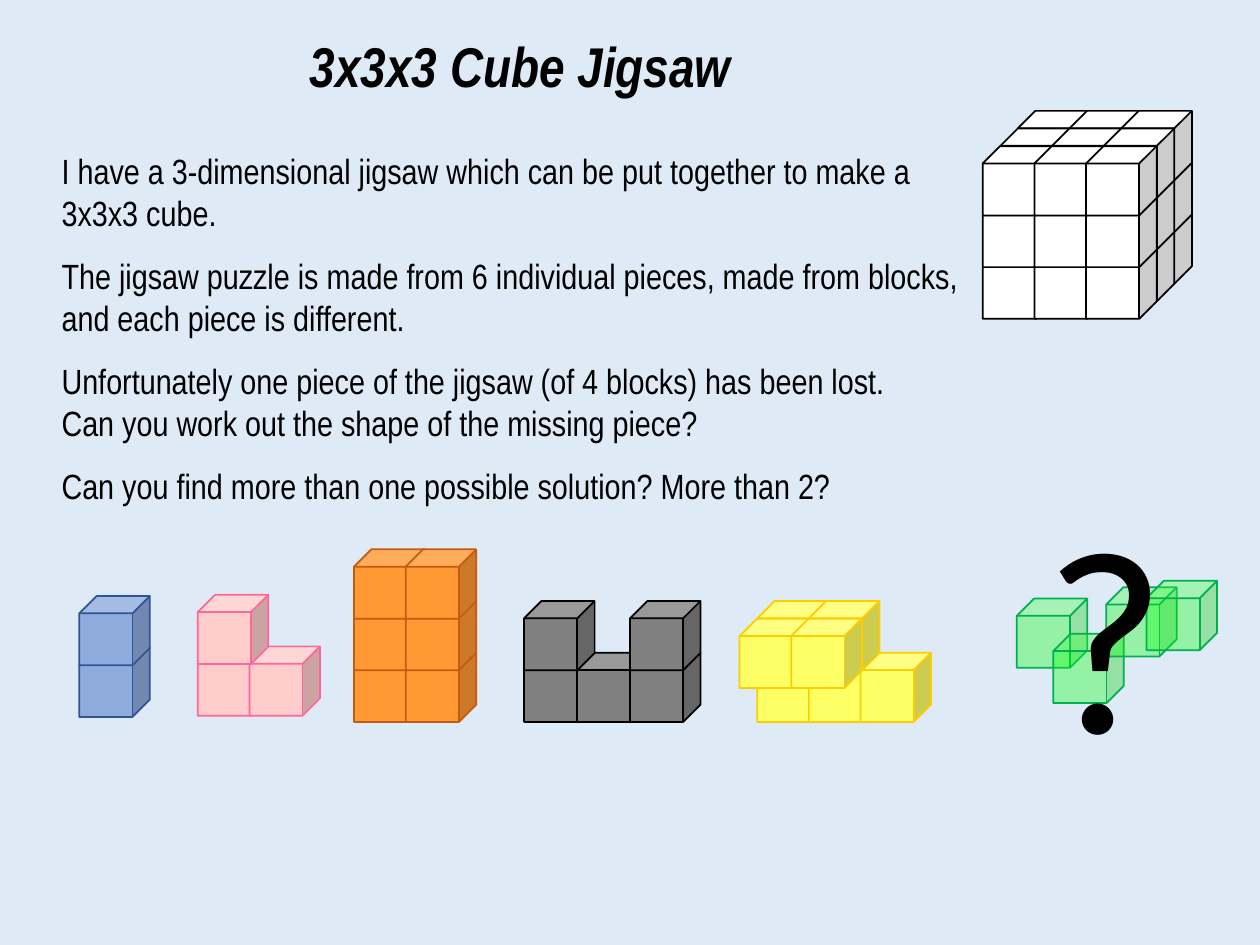
from itertools import product

from lxml import etree
from pptx import Presentation
from pptx.dml.color import RGBColor
from pptx.enum.shapes import MSO_SHAPE
from pptx.enum.text import MSO_AUTO_SIZE, PP_ALIGN
from pptx.oxml.ns import qn
from pptx.util import Inches, Pt

CUBE = MSO_SHAPE.CUBE
FIT_SHAPE = MSO_AUTO_SIZE.SHAPE_TO_FIT_TEXT
CENTER = PP_ALIGN.CENTER
LEFT = PP_ALIGN.LEFT

COLORS = {
    "background": "DEEBF7", "text": "000000",
    "blue": "8FAADC", "blue edge": "2F5597",
    "orange": "FF9933", "orange edge": "C55A11",
    "pink": "FFCCCC", "pink edge": "FF6699",
    "grey": "808080", "grey edge": "000000",
    "yellow": "FFFF66", "yellow edge": "FFCC00",
    "white": "FFFFFF", "white edge": "000000",
    "green": "00FF00", "green edge": "00B050",
}

TITLE = "3x3x3 Cube Jigsaw"
PUZZLE = [
    "I have a 3-dimensional jigsaw which can be put together to make a 3x3x3 cube.",
    "The jigsaw puzzle is made from 6 individual pieces, made from blocks, "
    "and each piece is different.",
    "Unfortunately one piece of the jigsaw (of 4 blocks) has been lost.\n"
    "Can you work out the shape of the missing piece?",
    "Can you find more than one possible solution? More than 2?",
]


def grid(columns, rows, layers=1):
    return [(column, row, layer) for layer, row, column
            in product(range(layers), range(rows), range(columns))]


PIECES = [
    ("blue", 0.63, 5.14, 0.41, grid(1, 2)),
    ("orange", 2.81, 5.18, 0.41, grid(2, 3)),
    ("pink", 1.57, 5.13, 0.41, grid(2, 1) + [(0, 1, 0)]),
    ("grey", 4.16, 5.18, 0.42, grid(3, 1) + [(0, 1, 0), (2, 1, 0)]),
    ("yellow", 6.01, 5.18, 0.41,
     grid(3, 1) + [(0, 1, 0), (1, 1, 0), (0, 1, 1), (1, 1, 1)]),
    ("white", 8.08, 1.7, 0.41, grid(3, 3, 3)),
]
MISSING_BLOCKS = [(8.07, 4.75), (8.36, 5.03), (8.78, 4.66), (9.1, 4.61)]


class PuzzleSlide:
    block_width = 0.56
    block_height = 0.55
    rise = 0.41
    depth = 0.14

    def __init__(self, slide):
        self.slide = slide
        fill = slide.background.fill
        fill.solid()
        fill.fore_color.rgb = self.color("background")

    def color(self, name):
        return RGBColor.from_string(COLORS[name])

    def text_box(self, left, top, width, height, wrap=True):
        box = self.slide.shapes.add_textbox(
            Inches(left), Inches(top), Inches(width), Inches(height))
        frame = box.text_frame
        frame.word_wrap = wrap
        frame.auto_size = FIT_SHAPE
        return frame

    def set_text(self, paragraph, text, size, font, strong=False, align=LEFT, before=0):
        paragraph.text = text
        paragraph.alignment = align
        paragraph.space_before = Pt(before)
        for run in paragraph.runs:
            run.font.name = font
            run.font.size = Pt(size)
            run.font.bold = run.font.italic = strong
            run.font.color.rgb = self.color("text")

    def blocks(self, name, positions, opacity=100):
        group = self.slide.shapes.add_group_shape()
        for left, top in positions:
            block = group.shapes.add_shape(
                CUBE, Inches(left), Inches(top),
                Inches(self.block_width), Inches(self.block_height))
            block.shadow.inherit = False
            block.fill.solid()
            block.fill.fore_color.rgb = self.color(name)
            block.line.color.rgb = self.color(f"{name} edge")
            block.line.width = Pt(1)
            if opacity < 100:
                tint = block.element.spPr.find(qn("a:solidFill"))[0]
                etree.SubElement(tint, qn("a:alpha"), val=str(opacity * 1000))

    def piece(self, name, left, top, pitch, cells):
        self.blocks(name, [
            (left + column * pitch - layer * self.depth,
             top - row * self.rise + layer * self.depth)
            for column, row, layer in cells])


def main():
    presentation = Presentation()
    presentation.slide_width = Inches(10)
    presentation.slide_height = Inches(7.5)
    page = PuzzleSlide(presentation.slides.add_slide(presentation.slide_layouts[6]))

    story = page.text_box(0.39, -0.1, 7.48, 4.21)
    story.margin_top = Inches(0.35)
    page.set_text(story.paragraphs[0], TITLE, 32, "Arial Narrow", strong=True, align=CENTER)
    for index, sentence in enumerate(PUZZLE):
        page.set_text(story.add_paragraph(), sentence, 20, "Arial Narrow",
                      before=12 if index else 29)

    for piece in PIECES:
        page.piece(*piece)
    page.blocks("green", MISSING_BLOCKS, opacity=33)

    question = page.text_box(8.19, 3.69, 1.18, 2.63, wrap=False)
    page.set_text(question.paragraphs[0], "?", 150, "Calibri")

    presentation.save("out.pptx")


if __name__ == "__main__":
    main()
